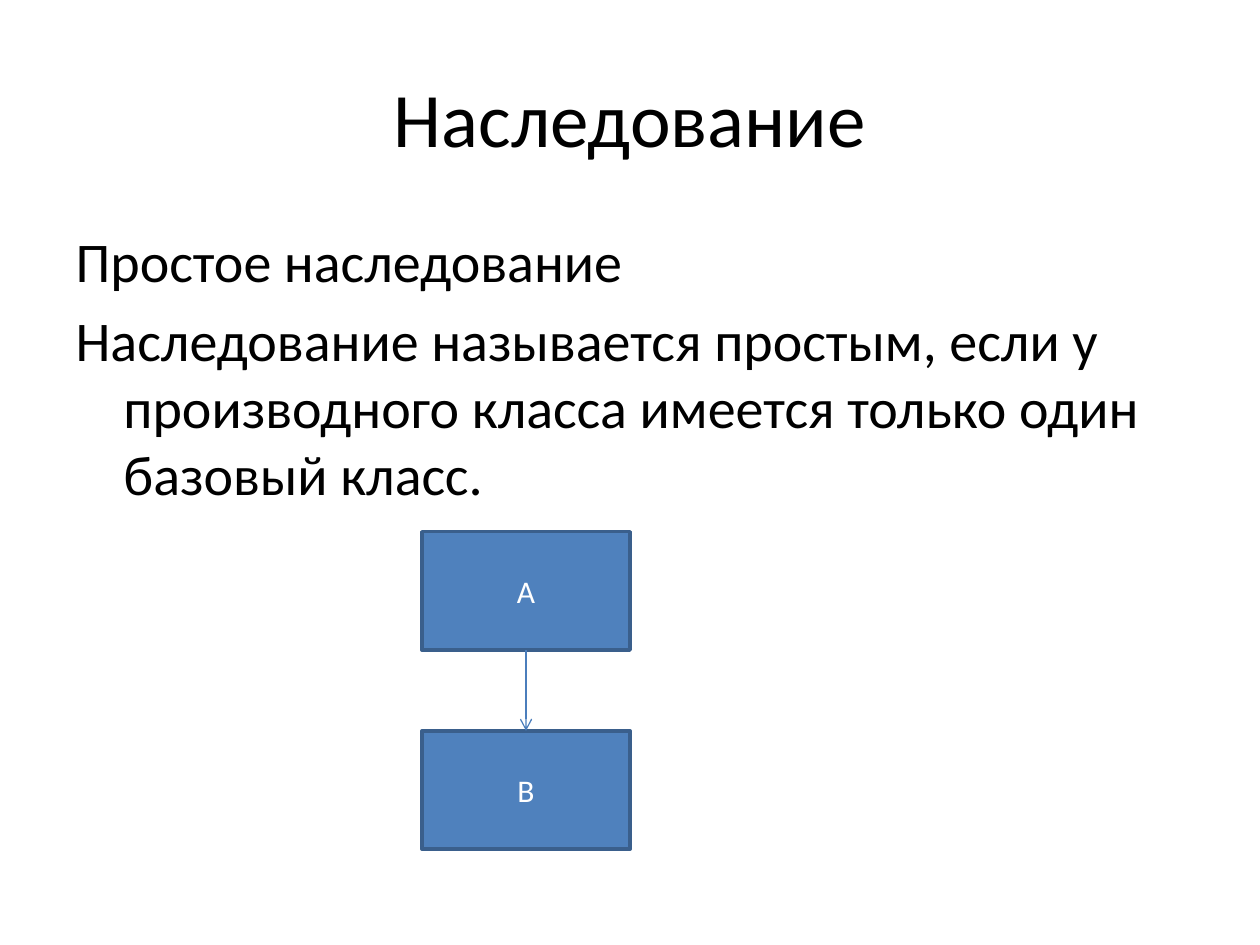
import pptx
import pptx.dml.color
import pptx.enum.shapes
import pptx.enum.text
import pptx.oxml
import pptx.oxml.ns
import pptx.util

Inches = pptx.util.Inches
ALIGN = pptx.enum.text.PP_ALIGN
ANCHOR = pptx.enum.text.MSO_ANCHOR

TITLE = "Наследование"
BODY = [
    "Простое наследование",
    "Наследование называется простым, если у производного класса "
    "имеется только один базовый класс.",
]
CLASSES = ["A", "B"]


def color(hex_string):
    """Return the colour for a hex string."""
    return pptx.dml.color.RGBColor.from_string(hex_string)


def set_attributes(target, values):
    """Set each named attribute on the target."""
    for name, value in values.items():
        setattr(target, name, value)


def place(shape, box):
    """Move and size a shape to a box of left, top, width, height in inches."""
    names = ("left", "top", "width", "height")
    set_attributes(shape, dict(zip(names, map(Inches, box))))


def write(shape, lines, size, hex_string, anchor, alignment):
    """Write one formatted paragraph for each line."""
    frame = shape.text_frame
    set_attributes(frame, {"text": "\n".join(lines), "word_wrap": True, "vertical_anchor": anchor})
    for paragraph in frame.paragraphs:
        paragraph.alignment = alignment
        font = paragraph.runs[0].font
        set_attributes(font, {"name": "Calibri", "size": pptx.util.Pt(size)})
        font.color.rgb = color(hex_string)


def add_title(slide, box):
    """Fill the title placeholder."""
    place(slide.shapes.title, box)
    write(slide.shapes.title, [TITLE], 44, "000000", ANCHOR.MIDDLE, ALIGN.CENTER)


def add_body(slide, box):
    """Fill the body placeholder with unbulleted hanging paragraphs."""
    body = slide.placeholders[1]
    place(body, box)
    write(body, BODY, 32, "000000", ANCHOR.TOP, ALIGN.LEFT)
    indent = Inches(0.38)
    for paragraph in body.text_frame.paragraphs:
        properties = paragraph._p.get_or_add_pPr()
        properties.set("marL", str(indent))
        properties.set("indent", str(-indent))
        pptx.oxml.ns.qn("a:buNone")
        properties.append(pptx.oxml.parse_xml(f"<a:buNone {pptx.oxml.ns.nsdecls('a')}/>"))


def add_class(slide, box, name):
    """Add one class rectangle."""
    shape = slide.shapes.add_shape(
        pptx.enum.shapes.MSO_SHAPE.RECTANGLE, *map(Inches, box))
    shape.shadow.inherit = False
    shape.fill.solid()
    shape.fill.fore_color.rgb = color("4F81BD")
    shape.line.color.rgb = color("3A5F8C")
    shape.line.width = pptx.util.Pt(2)
    write(shape, [name], 18, "FFFFFF", ANCHOR.MIDDLE, ALIGN.CENTER)
    return shape


def add_arrow(slide, base, derived):
    """Join the bottom of the base class to the top of the derived class."""
    arrow = slide.shapes.add_connector(pptx.enum.shapes.MSO_CONNECTOR.STRAIGHT, 0, 0, 0, 0)
    arrow.begin_connect(base, 2)
    arrow.end_connect(derived, 0)
    arrow.line.color.rgb = color("4B7EBC")
    arrow.line.width = pptx.util.Pt(0.75)
    namespace = pptx.oxml.ns.nsdecls("a")
    arrow.line._get_or_add_ln().append(
        pptx.oxml.parse_xml(f'<a:tailEnd {namespace} type="arrow"/>'))
    arrow._element.spPr.append(pptx.oxml.parse_xml(f"<a:effectLst {namespace}/>"))


def add_hierarchy(slide, box):
    """Stack the classes in the box and link each to the next."""
    left, top, width, height = box
    class_height = 0.94
    step = (height - class_height) / (len(CLASSES) - 1)
    shapes = [
        add_class(slide, (left, top + index * step, width, class_height), name)
        for index, name in enumerate(CLASSES)
    ]
    for base, derived in zip(shapes, shapes[1:]):
        add_arrow(slide, base, derived)


def main():
    """Build and save the presentation."""
    presentation = pptx.Presentation()
    set_attributes(presentation, {"slide_width": Inches(10), "slide_height": Inches(7.5)})
    slide = presentation.slides.add_slide(presentation.slide_layouts[1])
    add_title(slide, (0.5, 0.3, 9, 1.25))
    add_body(slide, (0.5, 1.75, 9, 4.95))
    add_hierarchy(slide, (3.35, 4.22, 1.65, 2.52))
    presentation.save("out.pptx")


if __name__ == "__main__":
    main()
